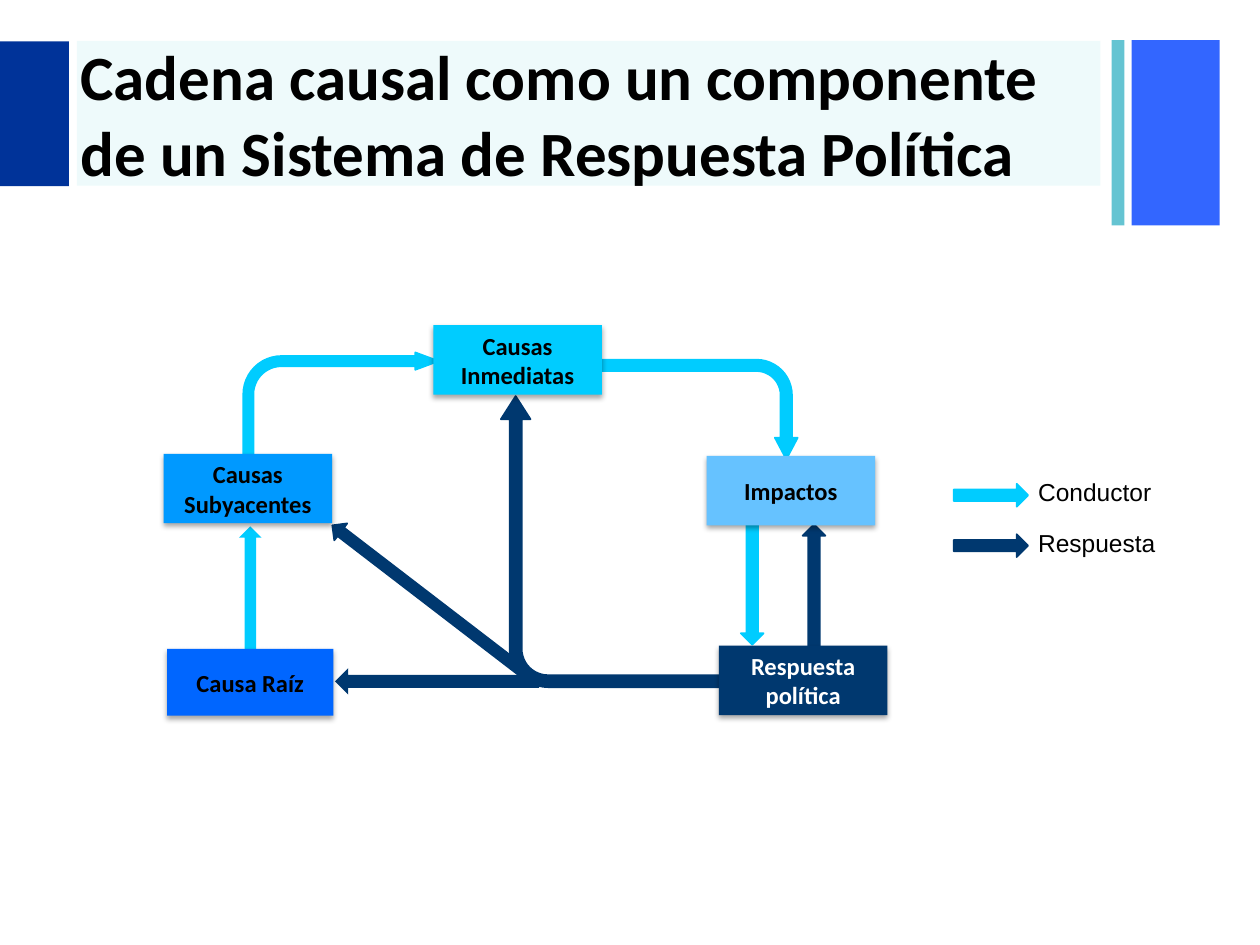
"""Builds the slide on the causal chain as part of a policy response system."""
from dataclasses import dataclass

from lxml.etree import SubElement
from pptx import Presentation
from pptx.dml.color import RGBColor
from pptx.enum.shapes import MSO_SHAPE
from pptx.enum.text import MSO_ANCHOR, PP_ALIGN
from pptx.oxml.ns import qn
from pptx.util import Pt


@dataclass(frozen=True)
class Theme:
    navy: str = "003399"
    royal: str = "3366FF"
    teal: str = "65C4D2"
    tint: str = "14C5D0"
    drive: str = "00CCFF"
    reply: str = "00386F"
    root: str = "0066FF"
    under: str = "0099FF"
    impact: str = "66C2FF"
    black: str = "000000"
    white: str = "FFFFFF"
    head: int = 36
    body: int = 14
    face: str = "Calibri"
    plain: str = "Arial"


theme = Theme()
deck = Presentation()
deck.slide_width, deck.slide_height = Pt(720), Pt(540)
slide = deck.slides.add_slide(deck.slide_layouts[6])


def draw(kind, place, color, edge=False):
    item = slide.shapes.add_shape(kind, *map(Pt, place))
    item.shadow.inherit = False
    item.fill.solid()
    item.fill.fore_color.rgb = RGBColor.from_string(color)
    if edge:
        item.line.color.rgb = RGBColor.from_string(color)
        item.line.width = Pt(1)
    else:
        item.line.fill.background()
    return item


def write(item, text, size, face, color, bold=False):
    frame = item.text_frame
    frame.word_wrap = True
    para = frame.paragraphs[0]
    para.text = text
    font = para.font
    font.size, font.name, font.bold = Pt(size), face, bold
    font.color.rgb = RGBColor.from_string(color)
    return frame


RECT, ARROW, BENT = MSO_SHAPE.RECTANGLE, MSO_SHAPE.RIGHT_ARROW, MSO_SHAPE.BENT_ARROW

draw(RECT, (646.6, 23, 50.4, 105.8), theme.royal)
draw(RECT, (635.3, 23, 7.2, 105.8), theme.teal)
draw(RECT, (0, 23.6, 39.4, 82.8), theme.navy)
band = draw(RECT, (43.9, 23.3, 584.9, 82.8), theme.tint)
tone = band.fill._xPr.find(".//" + qn("a:srgbClr"))
SubElement(tone, qn("a:alpha"), val="7000")

title = slide.shapes.add_textbox(Pt(38.9), Pt(24.5), Pt(595.4), Pt(80.6))
frame = write(title, "Cadena causal como un componente de un Sistema de Respuesta Política",
              theme.head, theme.face, theme.black, bold=True)
frame.vertical_anchor = MSO_ANCHOR.MIDDLE

bends = [
    ((265.4, 247.2, 166.3, 124.6), 270, theme.reply, (0.055, 0.068, 0.106, 0.176)),
    ((139, 201.4, 111.6, 61.2), 0, theme.drive, (0.095, 0.081, 0.217, 0.357)),
    ((370.5, 177.1, 56.9, 113.8), 90, theme.drive, (0.114, 0.115, 0.217, 0.357)),
]
for place, turn, color, ratios in bends:
    bend = draw(BENT, place, color, edge=True)
    bend.rotation = turn
    for index, ratio in enumerate(ratios):
        bend.adjustments[index] = ratio

arrows = [
    ((413.3, 344.9, 103.7, 13), 270, theme.reply, True),
    ((389.5, 321.6, 80.6, 13), 90, theme.drive, True),
    ((102, 335.3, 82.1, 13), 270, theme.drive, False),
    ((191.4, 381.8, 116.6, 15.1), 180, theme.reply, False),
    ((175, 337.9, 144, 12.2), 217.5, theme.reply, True),
]
for place, turn, color, edge in arrows:
    draw(ARROW, place, color, edge).rotation = turn

legend = [("Conductor", theme.drive), ("Respuesta", theme.reply)]
for row, (text, color) in enumerate(legend):
    top = 276.5 + 28.8 * row
    draw(ARROW, (545, top, 42.5, 13), color, edge=True)
    label = slide.shapes.add_textbox(Pt(586.1), Pt(top - 7.2), Pt(90), Pt(24.5))
    write(label, text, theme.body, theme.plain, theme.black)

boxes = [
    ("Causa Raíz", (95.5, 370.8, 95, 38.2), theme.root, theme.black),
    ("Causas Subyacentes", (93.5, 259.3, 96.3, 39.7), theme.under, theme.black),
    ("Causas Inmediatas", (247.6, 185.8, 96.3, 39.7), theme.drive, theme.black),
    ("Impactos", (403.8, 260.5, 96.3, 39.7), theme.impact, theme.black),
    ("Respuesta política", (410.8, 368.9, 96.3, 39.7), theme.reply, theme.white),
]
for text, place, color, ink in boxes:
    box = draw(RECT, place, color)
    frame = write(box, text, theme.body, theme.face, ink, bold=True)
    frame.vertical_anchor = MSO_ANCHOR.MIDDLE
    frame.paragraphs[0].alignment = PP_ALIGN.CENTER
    effects = box.fill._xPr.find(qn("a:effectLst"))
    shade = SubElement(effects, qn("a:outerShdw"), blurRad=str(Pt(3.1)),
                       dist=str(Pt(1.8)), dir="5400000", rotWithShape="0")
    tone = SubElement(shade, qn("a:srgbClr"), val=theme.black)
    SubElement(tone, qn("a:alpha"), val="35000")

deck.save("out.pptx")
